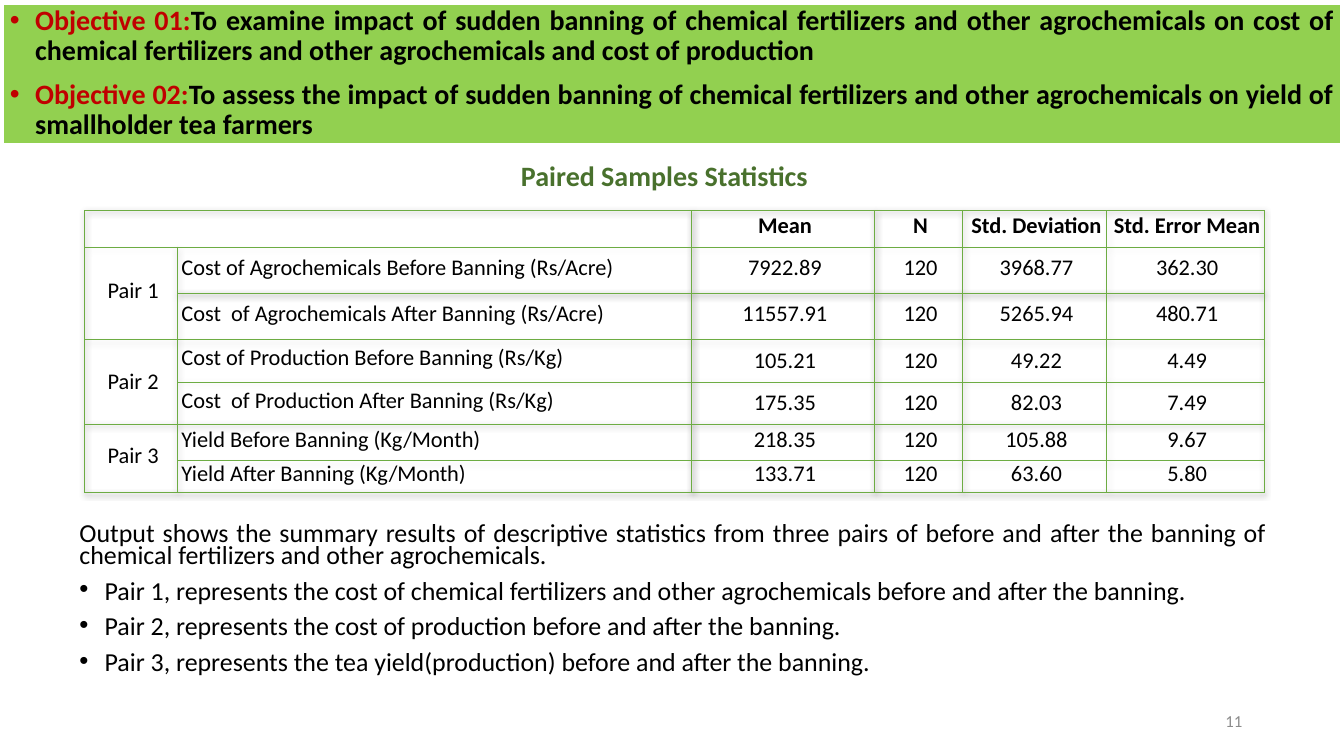
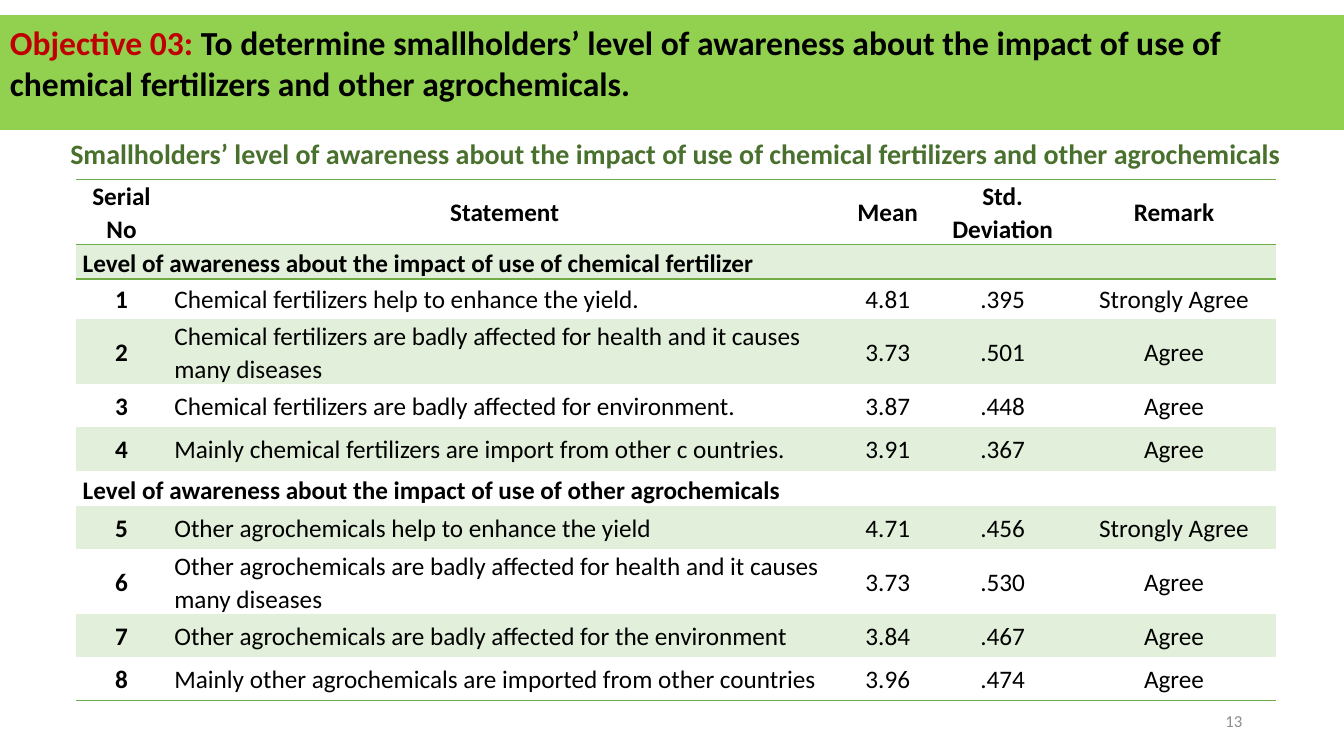
import pptx
import pptx.util
import pptx.dml.color
import pptx.enum.shapes
import pptx.enum.text
import pptx.oxml
import pptx.oxml.ns

Inches, Pt = pptx.util.Inches, pptx.util.Pt
RGBColor = pptx.dml.color.RGBColor
ALIGN = pptx.enum.text.PP_ALIGN
MIDDLE = pptx.enum.text.MSO_ANCHOR.MIDDLE

FONT = "Calibri"
BLACK = RGBColor(0, 0, 0)
WHITE = RGBColor(255, 255, 255)
RED = RGBColor(0xC0, 0, 0)
GRAY = RGBColor(0x8C, 0x8C, 0x8C)
BAND_GREEN = RGBColor(0x92, 0xD0, 0x50)
TITLE_GREEN = RGBColor(0x49, 0x71, 0x2D)
GRID_GREEN = RGBColor(0x6D, 0xAC, 0x43)
RULE_GREEN = RGBColor(0x70, 0xAD, 0x47)
STRIPE_GREEN = RGBColor(0xE2, 0xEF, 0xDA)

WIDTH, HEIGHT = 13.33, 7.5
NO_STYLE = "{2D5ABB26-0587-4C30-8999-92F81FD0307C}"

COST_OBJECTIVES = [
    ("Objective 01:", "To examine impact of sudden banning of chemical fertilizers and other agrochemicals on cost of chemical fertilizers and other agrochemicals and cost of production"),
    ("Objective 02:", "To assess the impact of sudden banning of chemical fertilizers and other agrochemicals on yield of smallholder tea farmers"),
]
AWARENESS_OBJECTIVES = [
    ("Objective 03: ", "To determine smallholders’ level of awareness about the impact of use of chemical fertilizers and other agrochemicals."),
]

PAIR_HEADERS = ["Mean", "N", "Std. Deviation", "Std. Error Mean"]
PAIRS = {
    "Pair 1": [
        ("Cost of Agrochemicals Before Banning (Rs/Acre)", "7922.89", "120", "3968.77", "362.30"),
        ("Cost  of Agrochemicals After Banning (Rs/Acre)", "11557.91", "120", "5265.94", "480.71"),
    ],
    "Pair 2": [
        ("Cost of Production Before Banning (Rs/Kg)", "105.21", "120", "49.22", "4.49"),
        ("Cost  of Production After Banning (Rs/Kg)", "175.35", "120", "82.03", "7.49"),
    ],
    "Pair 3": [
        ("Yield Before Banning (Kg/Month)", "218.35", "120", "105.88", "9.67"),
        ("Yield After Banning (Kg/Month)", "133.71", "120", "63.60", "5.80"),
    ],
}
PAIR_COLUMNS = [0.92, 5.1, 1.81, 0.88, 1.42, 1.57]
PAIR_ROWS = [0.36, 0.46, 0.46, 0.42, 0.42, 0.36, 0.32]

SUMMARY = "Output shows the summary results of descriptive statistics from three pairs of before and after the banning of chemical fertilizers and other agrochemicals."
PAIR_NOTES = [
    "Pair 1, represents the cost of chemical fertilizers and other agrochemicals before and after the banning.",
    "Pair 2, represents the cost of production before and after the banning.",
    "Pair 3, represents the tea yield(production) before and after the banning.",
]

AWARENESS_ROWS = [
    ("Serial No", "Statement", "Mean", "Std. Deviation", "Remark"),
    ("Level of awareness about the impact of use of chemical fertilizer",),
    ("1", "Chemical fertilizers help to enhance the yield.", "4.81", ".395", "Strongly Agree"),
    ("2", "Chemical fertilizers are badly affected for health and it causes many diseases", "3.73", ".501", "Agree"),
    ("3", "Chemical fertilizers are badly affected for environment.", "3.87", ".448", "Agree"),
    ("4", "Mainly chemical fertilizers are import from other c ountries.", "3.91", ".367", "Agree"),
    ("Level of awareness about the impact of use of other agrochemicals",),
    ("5", "Other agrochemicals help to enhance the yield", "4.71", ".456", "Strongly Agree"),
    ("6", "Other agrochemicals are badly affected for health and it causes many diseases", "3.73", ".530", "Agree"),
    ("7", "Other agrochemicals are badly affected for the environment", "3.84", ".467", "Agree"),
    ("8", "Mainly other agrochemicals are imported from other countries", "3.96", ".474", "Agree"),
]
AWARENESS_COLUMNS = [0.91, 6.69, 0.91, 1.37, 2.03]
AWARENESS_HEIGHTS = [0.64, 0.34, 0.4, 0.64, 0.43, 0.43, 0.35, 0.43, 0.64, 0.43, 0.43]


def add_xml(parent, markup, index=None):
    namespace = pptx.oxml.ns.nsdecls("a")
    element = pptx.oxml.parse_xml(markup.replace(" ", f" {namespace} ", 1))
    parent.insert(len(parent) if index is None else index, element)


def write(frame, text, size=18, color=BLACK, bold=False, align=ALIGN.LEFT,
          spacing=None, before=0, indent=0, bullet=False, lead="", lead_color=RED):
    first = not frame.paragraphs[0].runs
    para = frame.paragraphs[0] if first else frame.add_paragraph()
    properties = para._p.get_or_add_pPr()
    if indent:
        properties.set("marL", str(Inches(indent)))
    if bullet:
        properties.set("indent", str(-Inches(indent)))
        add_xml(properties, '<a:buFont typeface="Arial"/>')
        add_xml(properties, '<a:buChar char="•"/>')
    para.alignment = align
    para.space_before = Pt(0 if first else before)
    if spacing:
        para.line_spacing = spacing
    for words, tint in ((lead, lead_color), (text, color)):
        if words:
            span = para.add_run()
            span.text = words
            span.font.name = FONT
            span.font.size = Pt(size)
            span.font.bold = bold
            span.font.color.rgb = tint


def add_box(page, left, top, width, height):
    box = page.shapes.add_textbox(*map(Inches, (left, top, width, height)))
    box.text_frame.word_wrap = True
    return box.text_frame


def start_page(deck, title, center, top, number):
    page = deck.slides.add_slide(deck.slide_layouts[5])
    heading = page.shapes.title
    width = 12.29
    heading.left, heading.top = Inches(center - width / 2), Inches(top)
    heading.width, heading.height = Inches(width), Inches(0.44)
    frame = heading.text_frame
    frame.auto_size = pptx.enum.text.MSO_AUTO_SIZE.NONE
    frame.vertical_anchor = MIDDLE
    write(frame, title, size=20, color=TITLE_GREEN, bold=True, align=ALIGN.CENTER)
    footer = add_box(page, 9.42, 6.95, 3, 0.4)
    footer.vertical_anchor = MIDDLE
    write(footer, number, size=12, color=GRAY, align=ALIGN.RIGHT)
    return page


def add_band(page, top, height, objectives, outline=0, inset=0.05, **style):
    band = page.shapes.add_shape(pptx.enum.shapes.MSO_SHAPE.RECTANGLE, 0, Inches(top), Inches(WIDTH), Inches(height))
    band.shadow.inherit = False
    band.fill.solid()
    band.fill.fore_color.rgb = BAND_GREEN
    if outline:
        band.line.color.rgb = WHITE
        band.line.width = Pt(outline)
    else:
        band.line.fill.background()
    frame = band.text_frame
    frame.word_wrap = True
    frame.vertical_anchor = pptx.enum.text.MSO_ANCHOR.TOP
    frame.margin_top = Inches(inset)
    for lead, text in objectives:
        write(frame, text, lead=lead, bold=True, **style)


def add_grid(page, left, top, columns, rows, side_margin=0):
    frame = page.shapes.add_table(len(rows), len(columns), Inches(left), Inches(top),
                                  Inches(sum(columns)), Inches(sum(rows)))
    table = frame.table
    table.first_row = table.horz_banding = False
    table._tbl.tblPr.find(pptx.oxml.ns.qn("a:tableStyleId")).text = NO_STYLE
    for column, width in zip(table.columns, columns):
        column.width = Inches(width)
    for row, height in zip(table.rows, rows):
        row.height = Inches(height)
    for cell in table.iter_cells():
        cell.margin_left = cell.margin_right = Inches(side_margin)
        cell.margin_top = cell.margin_bottom = 0
        cell.vertical_anchor = MIDDLE
        cell.fill.background()
    return table


def rule_cell(cell, sides, color, width):
    for index, side in enumerate(sides):
        add_xml(cell._tc.get_or_add_tcPr(),
                f'<a:ln{side} w="{Pt(width)}"><a:solidFill><a:srgbClr val="{color}"/></a:solidFill></a:ln{side}>', index)


def add_pair_table(page):
    table = add_grid(page, 0.84, 2.09, PAIR_COLUMNS, PAIR_ROWS)
    add_xml(table._tbl.tblPr,
            '<a:effectLst ><a:outerShdw blurRad="50800" dist="12700" dir="5400000">'
            '<a:srgbClr val="000000"><a:alpha val="40000"/></a:srgbClr></a:outerShdw></a:effectLst>', 0)
    for cell in table.iter_cells():
        rule_cell(cell, "LRTB", GRID_GREEN, 0.75)
    style = dict(size=16, indent=0.04)
    exact = Pt(16)
    table.cell(0, 0).merge(table.cell(0, 1))
    for column, header in enumerate(PAIR_HEADERS, 2):
        write(table.cell(0, column).text_frame, header, bold=True, align=ALIGN.CENTER, spacing=exact, **style)
    for group, (pair, measures) in enumerate(PAIRS.items()):
        top = 1 + 2 * group
        spacing = None if pair == "Pair 2" else exact
        table.cell(top, 0).merge(table.cell(top + 1, 0))
        write(table.cell(top, 0).text_frame, pair, align=ALIGN.CENTER, spacing=spacing, **style)
        for row, (label, *values) in enumerate(measures, top):
            write(table.cell(row, 1).text_frame, label, spacing=exact, **style)
            for column, value in enumerate(values, 2):
                write(table.cell(row, column).text_frame, value, align=ALIGN.CENTER, spacing=spacing, **style)


def add_awareness_table(page):
    table = add_grid(page, 0.75, 1.78, AWARENESS_COLUMNS, AWARENESS_HEIGHTS, side_margin=0.07)
    last = len(AWARENESS_ROWS) - 1
    edges = {0: "TB", 1: "T", last: "B"}
    for row, texts in enumerate(AWARENESS_ROWS):
        section = len(texts) == 1
        for column in range(len(AWARENESS_COLUMNS)):
            cell = table.cell(row, column)
            if row % 2:
                cell.fill.solid()
                cell.fill.fore_color.rgb = STRIPE_GREEN
            rule_cell(cell, edges.get(row, ""), RULE_GREEN, 1)
        if section:
            table.cell(row, 0).merge(table.cell(row, len(AWARENESS_COLUMNS) - 1))
        for column, text in enumerate(texts):
            left = section or (column == 1 and row > 0)
            write(table.cell(row, column).text_frame, text, bold=row == 0 or column == 0,
                  align=ALIGN.LEFT if left else ALIGN.CENTER, spacing=1.15 if section else 1.07)


def main():
    deck = pptx.Presentation()
    deck.slide_width, deck.slide_height = Inches(WIDTH), Inches(HEIGHT)

    page = start_page(deck, "Paired Samples Statistics", 6.59, 1.52, "11")
    bullets = dict(align=ALIGN.JUSTIFY, before=10, indent=0.25, bullet=True)
    add_band(page, 0.01, 1.45, COST_OBJECTIVES, outline=6, size=20, spacing=0.9, **bullets)
    add_pair_table(page)
    notes = add_box(page, 0.69, 5.16, 11.96, 1.71)
    write(notes, SUMMARY, size=18.5, align=ALIGN.JUSTIFY, spacing=0.7)
    for note in PAIR_NOTES:
        write(notes, note, size=18.5, spacing=0.7, **bullets)

    page = start_page(deck, "Smallholders’ level of awareness about the impact of use of chemical fertilizers and other agrochemicals", 6.7, 1.3, "13")
    add_band(page, 0.15, 1.14, AWARENESS_OBJECTIVES, inset=0.07, size=24)
    add_awareness_table(page)

    deck.save("out.pptx")


if __name__ == "__main__":
    main()
